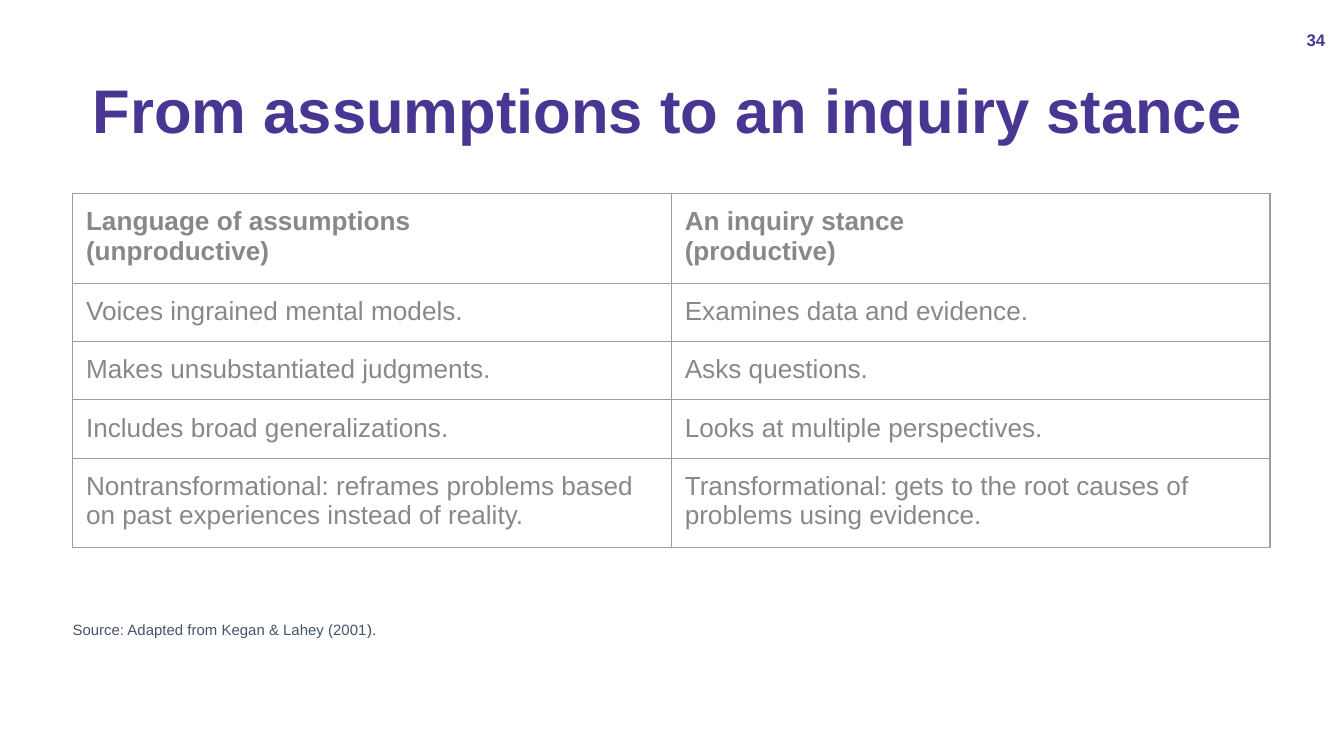
from lxml import etree
from pptx import Presentation
from pptx.dml.color import RGBColor
from pptx.enum import text
from pptx.oxml import ns
from pptx.util import Inches, Pt

FONT = "Arial"
PURPLE, GRAY, SLATE, DARK = "483692", "888888", "44546A", "434343"
BORDER = "9E9E9E"

ROWS = [
    ("Language of assumptions\n(unproductive)", "An inquiry stance\n(productive)"),
    ("Voices ingrained mental models.", "Examines data and evidence."),
    ("Makes unsubstantiated judgments.", "Asks questions."),
    ("Includes broad generalizations.", "Looks at multiple perspectives."),
    ("Nontransformational: reframes problems based on past experiences instead of reality.",
     "Transformational: gets to the root causes of problems using evidence."),
]


def rgb(color):
    return RGBColor.from_string(color)


def add_run(paragraph, words, size, color, bold=False):
    run = paragraph.add_run()
    run.text = words
    run.font.name = FONT
    run.font.size = Pt(size)
    run.font.bold = bold
    run.font.color.rgb = rgb(color)


def add_text(slide, box, runs, size, bold=False, left_inset=0.07,
             anchor=text.MSO_ANCHOR.MIDDLE):
    """Add a one-paragraph text box; runs are (words, color) pairs."""
    frame = slide.shapes.add_textbox(*map(Inches, box)).text_frame
    frame.word_wrap = True
    frame.vertical_anchor = anchor
    frame.margin_left, frame.margin_right = Inches(left_inset), Inches(0.07)
    frame.margin_top = frame.margin_bottom = Inches(0.04)
    paragraph = frame.paragraphs[0]
    for words, color in runs:
        add_run(paragraph, words, size, color, bold)
    return paragraph


def set_borders(cell, color, width):
    properties = cell._tc.get_or_add_tcPr()
    for position, side in enumerate(("a:lnL", "a:lnR", "a:lnT", "a:lnB")):
        line = etree.Element(ns.qn(side), w=str(Pt(width)))
        fill = etree.SubElement(line, ns.qn("a:solidFill"))
        etree.SubElement(fill, ns.qn("a:srgbClr"), val=color)
        properties.insert(position, line)


def fill_cell(cell, words, bold):
    cell.fill.background()
    cell.margin_left = cell.margin_right = Inches(0.1)
    cell.margin_top = cell.margin_bottom = Inches(0.1)
    frame = cell.text_frame
    for index, line in enumerate(words.split("\n")):
        paragraph = frame.add_paragraph() if index else frame.paragraphs[0]
        add_run(paragraph, line, 14, GRAY, bold)
    set_borders(cell, BORDER, 0.75)


def add_comparison(slide):
    height = Inches(2.63)
    shape = slide.shapes.add_table(
        len(ROWS), 2, Inches(0.54), Inches(1.44), Inches(8.91), height)
    table = shape.table
    table.horz_banding = False
    for row_index, row in enumerate(ROWS):
        table.rows[row_index].height = Inches(0.42)
        for column_index, words in enumerate(row):
            fill_cell(table.cell(row_index, column_index), words, row_index == 0)
    # Row heights are minimums; the frame keeps room for the two-line rows
    shape.height = height


def main():
    presentation = Presentation()
    presentation.slide_width = Inches(10)
    presentation.slide_height = Inches(10) * 9 // 16
    slide = presentation.slides.add_slide(presentation.slide_layouts[6])

    # Title
    title = add_text(slide, (0.69, 0.3, 8.77, 1.09),
                     [("From assumptions to an inquiry stance", PURPLE)],
                     33, bold=True, left_inset=0)
    title.line_spacing = 0.9

    # Comparison table
    add_comparison(slide)

    # Source line
    source = add_text(slide, (0.54, 4.59, 4.24, 0.51),
                      [("Source: Adapted from Kegan & Lahey (2001", SLATE), (").", DARK)],
                      8, left_inset=0, anchor=text.MSO_ANCHOR.TOP)
    source.line_spacing = 0.9

    # Page number
    number = add_text(slide, (9.51, 0.15, 0.42, 0.3), [("34", PURPLE)], 9, bold=True)
    number.alignment = text.PP_ALIGN.RIGHT

    presentation.save("out.pptx")


if __name__ == "__main__":
    main()
